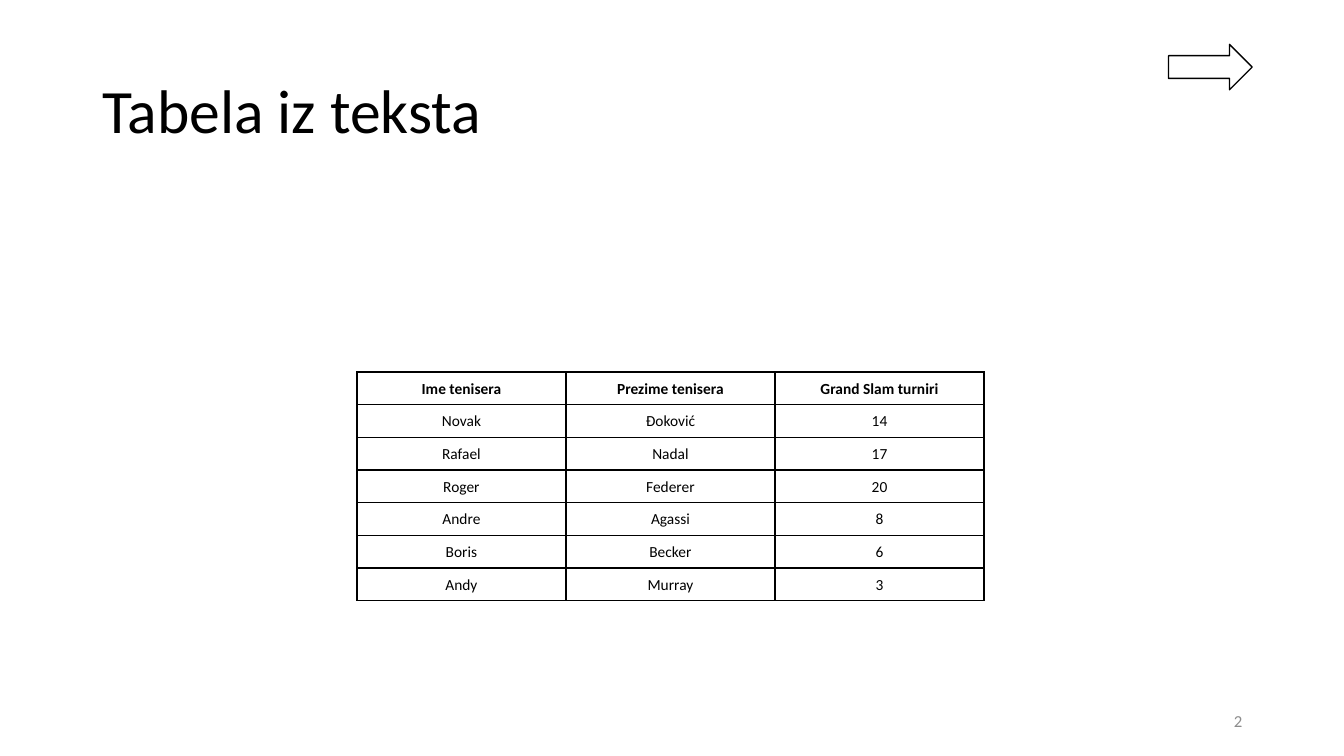
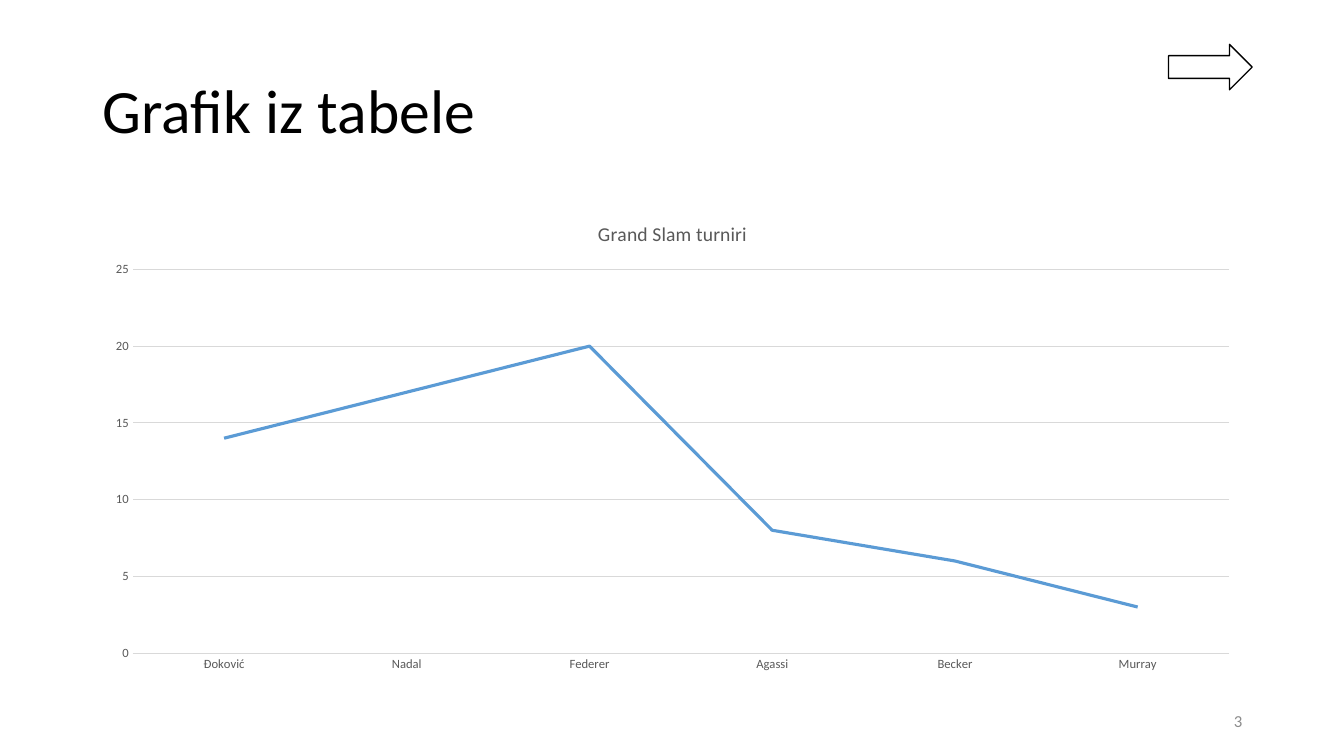
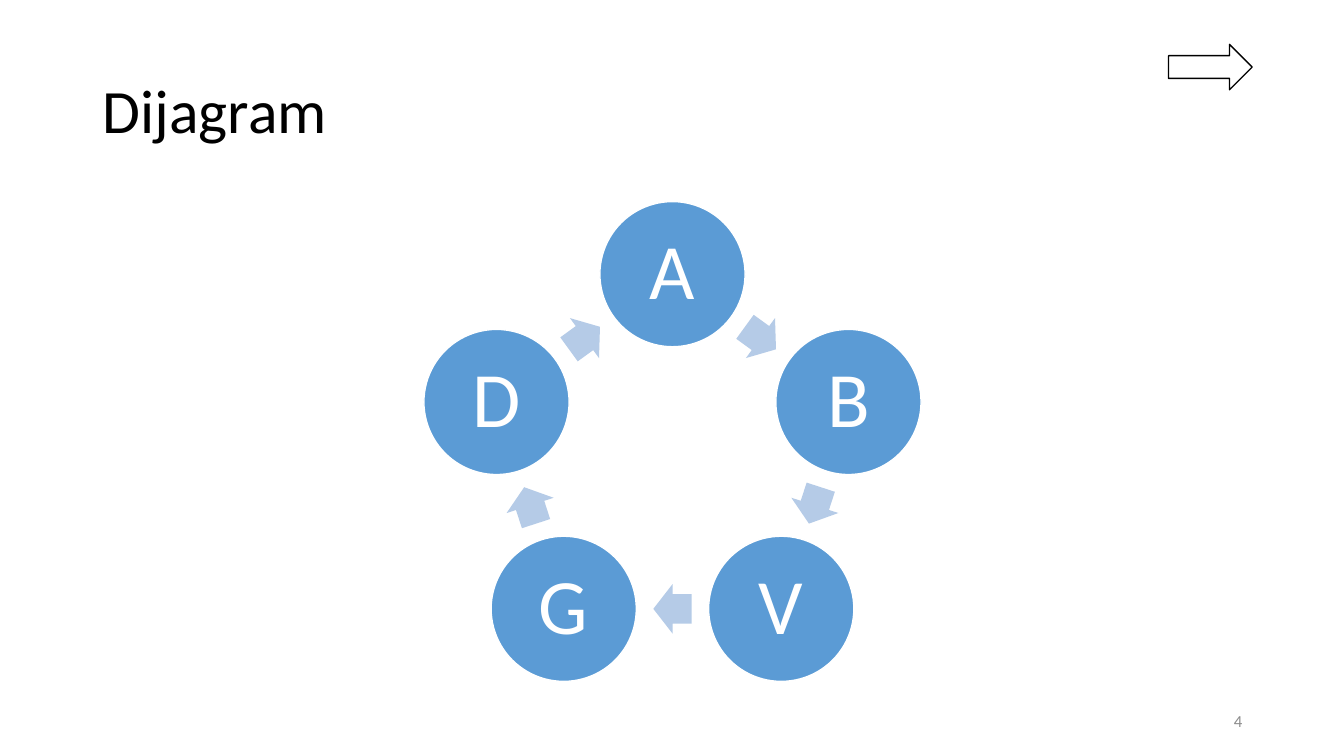
import math
from dataclasses import dataclass

from lxml import etree
from pptx import Presentation
from pptx import util as u
from pptx.chart import data as chart_data
from pptx.dml import color
from pptx.enum import chart as chart_enum
from pptx.enum import shapes, text
from pptx.oxml import ns

PX = 9144  # EMU per px, 100 px to the inch


@dataclass(frozen=True)
class Theme:
    font: str = "Calibri"
    black: str = "000000"
    white: str = "FFFFFF"
    number: str = "8C8C8C"
    label: str = "595959"
    grid: str = "D9D9D9"
    accent: str = "5B9BD5"
    accent_pale: str = "B5CBE7"
    title_size: int = 44
    table_size: int = 11
    number_size: int = 12
    chart_title_size: int = 14
    axis_size: int = 9
    node_size: int = 56


THEME = Theme()

# Boxes as left, top, width, height
SLIDE_SIZE = (1333, 750)
TITLE_BOX = (92, 40, 1150, 145)
ARROW_BOX = (1159, 44, 83, 45)
NUMBER_BOX = (942, 695, 300, 40)
CONTENT_BOX = (92, 200, 1150, 476)
TABLE_BOX = (354, 369, 622, 227)

HEADERS = ("Ime tenisera", "Prezime tenisera", "Grand Slam turniri")
PLAYERS = (
    ("Novak", "Đoković", 14),
    ("Rafael", "Nadal", 17),
    ("Roger", "Federer", 20),
    ("Andre", "Agassi", 8),
    ("Boris", "Becker", 6),
    ("Andy", "Murray", 3),
)


# Formatting helpers
def emu(*lengths):
    return [u.Emu(round(length * PX)) for length in lengths]


def rgb(value):
    return color.RGBColor.from_string(value)


def set_format(target, values):
    for name, value in values.items():
        setattr(target, name, value)


def set_font(font, size, fill, bold=False):
    set_format(font, {"name": THEME.font, "size": u.Pt(size), "bold": bold})
    font.color.rgb = rgb(fill)


def set_line(line, fill, width):
    line.color.rgb = rgb(fill)
    line.width = u.Pt(width)


def write(frame, content, size, fill, align=text.PP_ALIGN.LEFT, spacing=1.0, bold=False):
    paragraph = frame.paragraphs[0]
    set_format(paragraph, {"alignment": align, "line_spacing": spacing})
    run = paragraph.add_run()
    run.text = content
    set_font(run.font, size, fill, bold)


def add_text(slide, box, content, size, fill, **options):
    frame = slide.shapes.add_textbox(*emu(*box)).text_frame
    set_format(frame, {"word_wrap": True, "vertical_anchor": text.MSO_ANCHOR.MIDDLE})
    write(frame, content, size, fill, **options)


def add_shape(slide, kind, box, fill, line=None):
    shape = slide.shapes.add_shape(kind, *emu(*box))
    shape.shadow.inherit = False
    shape.fill.solid()
    shape.fill.fore_color.rgb = rgb(fill)
    if line:
        set_line(shape.line, line, 1)
    else:
        shape.line.fill.background()
    return shape


def set_borders(cell, fill, width):
    properties = cell._tc.get_or_add_tcPr()
    for index, side in enumerate(("lnL", "lnR", "lnT", "lnB")):
        border = etree.Element(ns.qn(f"a:{side}"), w=str(u.Pt(width)))
        solid = etree.SubElement(border, ns.qn("a:solidFill"))
        etree.SubElement(solid, ns.qn("a:srgbClr"), val=fill)
        properties.insert(index, border)


# Parts shared by all slides
def add_base_slide(presentation, title, number):
    slide = presentation.slides.add_slide(presentation.slide_layouts[6])
    add_shape(slide, shapes.MSO_SHAPE.RIGHT_ARROW, ARROW_BOX, THEME.white, THEME.black)
    add_text(slide, TITLE_BOX, title, THEME.title_size, THEME.black, spacing=0.9)
    add_text(slide, NUMBER_BOX, str(number), THEME.number_size, THEME.number,
             align=text.PP_ALIGN.RIGHT)
    return slide


# Table of players
def add_player_table(slide, box):
    records = (HEADERS,) + PLAYERS
    table = slide.shapes.add_table(len(records), len(HEADERS), *emu(*box)).table
    set_format(table, {"first_row": False, "horz_banding": False})
    left, top, width, height = emu(*box)
    for column in table.columns:
        column.width = width // len(HEADERS)
    for row in table.rows:
        row.height = height // len(records)
    side, edge = emu(7, 0)
    cell_format = {
        "margin_left": side, "margin_right": side,
        "margin_top": edge, "margin_bottom": edge,
        "vertical_anchor": text.MSO_ANCHOR.MIDDLE,
    }
    for row_index, record in enumerate(records):
        for column_index, value in enumerate(record):
            cell = table.cell(row_index, column_index)
            set_format(cell, cell_format)
            cell.fill.background()
            set_borders(cell, THEME.black, 1)
            write(cell.text_frame, str(value), THEME.table_size, THEME.black,
                  align=text.PP_ALIGN.CENTER, spacing=1.07, bold=row_index == 0)


# Line chart of titles won
def add_titles_chart(slide, box):
    data = chart_data.CategoryChartData()
    data.categories = [surname for _, surname, _ in PLAYERS]
    data.add_series(HEADERS[2], [titles for _, _, titles in PLAYERS])
    chart = slide.shapes.add_chart(chart_enum.XL_CHART_TYPE.LINE, *emu(*box), data).chart
    set_font(chart.font, THEME.axis_size, THEME.label)
    set_format(chart, {"has_legend": False, "has_title": True})
    write(chart.chart_title.text_frame, HEADERS[2], THEME.chart_title_size, THEME.label,
          align=text.PP_ALIGN.CENTER)
    chart.chart_title.include_in_layout = False

    plot = chart.plots[0]
    plot.vary_by_categories = False
    series = plot.series[0]
    series.smooth = False
    series.marker.style = chart_enum.XL_MARKER_STYLE.NONE
    set_line(series.format.line, THEME.accent, 2.25)

    no_ticks = {
        "major_tick_mark": chart_enum.XL_TICK_MARK.NONE,
        "minor_tick_mark": chart_enum.XL_TICK_MARK.NONE,
    }
    for axis in (chart.category_axis, chart.value_axis):
        set_format(axis, no_ticks)
        set_font(axis.tick_labels.font, THEME.axis_size, THEME.label)
    set_line(chart.category_axis.format.line, THEME.grid, 0.75)
    value_axis = chart.value_axis
    set_format(value_axis, {"minimum_scale": 0, "maximum_scale": 25, "major_unit": 5,
                            "has_major_gridlines": True})
    value_axis.format.line.fill.background()
    set_line(value_axis.major_gridlines.format.line, THEME.grid, 0.75)


# Cycle of circles with an arrow after each
def add_cycle(slide, box, letters, diameter=144, arrow_size=(38, 49)):
    left, top, width, height = box
    step = 2 * math.pi / len(letters)
    radius = (height - diameter) / (1 + math.cos(step / 2))
    center_x = left + width / 2
    center_y = top + diameter / 2 + radius
    arrow_width, arrow_height = arrow_size
    inset, = emu(8)
    frame_format = {f"margin_{side}": inset for side in ("left", "right", "top", "bottom")}
    frame_format.update(word_wrap=True, vertical_anchor=text.MSO_ANCHOR.MIDDLE)

    def centered(angle, distance, part_width, part_height):
        return (center_x + distance * math.sin(angle) - part_width / 2,
                center_y - distance * math.cos(angle) - part_height / 2,
                part_width, part_height)

    for index, letter in enumerate(letters):
        angle = index * step
        circle = add_shape(slide, shapes.MSO_SHAPE.OVAL,
                           centered(angle, radius, diameter, diameter),
                           THEME.accent, THEME.white)
        set_format(circle.text_frame, frame_format)
        write(circle.text_frame, letter, THEME.node_size, THEME.white,
              align=text.PP_ALIGN.CENTER, spacing=0.9)

        between = angle + step / 2
        arrow = add_shape(slide, shapes.MSO_SHAPE.RIGHT_ARROW,
                          centered(between, radius * math.cos(step / 2),
                                   arrow_width, arrow_height),
                          THEME.accent_pale)
        arrow.adjustments[0] = 0.6
        arrow.adjustments[1] = 0.5
        arrow.rotation = round(math.degrees(between))


def main():
    presentation = Presentation()
    presentation.slide_width, presentation.slide_height = emu(*SLIDE_SIZE)
    add_player_table(add_base_slide(presentation, "Tabela iz teksta", 2), TABLE_BOX)
    add_titles_chart(add_base_slide(presentation, "Grafik iz tabele", 3), CONTENT_BOX)
    add_cycle(add_base_slide(presentation, "Dijagram", 4), CONTENT_BOX, "ABVGD")
    presentation.save("out.pptx")


if __name__ == "__main__":
    main()
